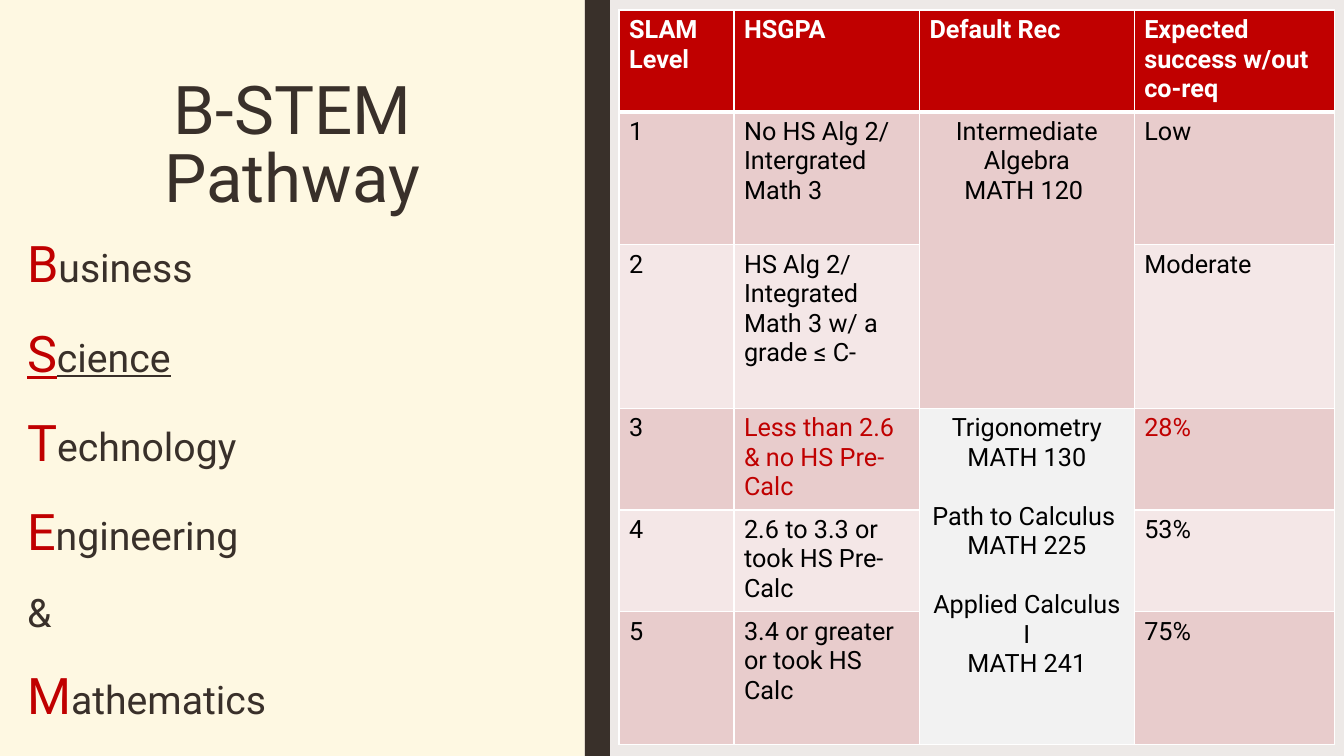
from lxml import etree
from pptx import Presentation
from pptx import util as u
from pptx.dml import color
from pptx.enum import shapes, text
from pptx.oxml import ns

PX = 9144
FONT = "Roboto"
RED, BROWN, CREAM, WHITE, BLACK = "C00000", "39302A", "FEF8E2", "FFFFFF", "000000"
BANDS = ("E8CCCC", "F4E7E7")
SUBJECTS = ("Business", "Science", "Technology", "Engineering", "&", "Mathematics")
COLUMNS = (114, 184, 213, 199)
ROWS = (101, 132, 162, 101, 101, 132)
COURSE_COLUMN = 2
COURSE_SPANS = ((1, 2, BANDS[0]), (3, 5, "F2F2F2"))
LEVELS = (
    ("SLAM Level", "HSGPA", "Default Rec", "Expected success w/out co-req"),
    ("1", "No HS Alg 2/ Intergrated Math 3", "Intermediate Algebra\nMATH 120 ", "Low"),
    ("2", "HS Alg 2/ Integrated Math 3 w/ a grade ≤ C-", "", "Moderate"),
    ("3", "Less than 2.6 & no HS Pre-Calc",
     "Trigonometry\nMATH 130\nPath to Calculus \nMATH 225\nApplied Calculus I\nMATH 241", "28%"),
    ("4", "2.6 to 3.3 or took HS Pre-Calc", "", "53%"),
    ("5", "3.4 or greater or took HS Calc", "", "75%"),
)
RED_CELLS = ((3, 1), (3, 3))


def px(*lengths):
    """Turn whole px into EMU."""
    return [u.Emu(length * PX) for length in lengths]


def paint(fill, value):
    """Give a fill one solid colour."""
    fill.solid()
    fill.fore_color.rgb = color.RGBColor.from_string(value)


def style(font, size, value, bold=False):
    """Set the face, size, weight and colour of a font."""
    font.name, font.size, font.bold = FONT, u.Pt(size), bold
    font.color.rgb = color.RGBColor.from_string(value)


def add_panel(page, box, value):
    """Fill the box with a plain rectangle."""
    panel = page.shapes.add_shape(shapes.MSO_SHAPE.RECTANGLE, *px(*box))
    panel.shadow.inherit = False
    panel.line.fill.background()
    paint(panel.fill, value)


def add_frame(page, box):
    """Add a wrapping text box and return its text frame."""
    frame = page.shapes.add_textbox(*px(*box)).text_frame
    frame.word_wrap = True
    return frame


def add_title(page, box):
    """Write the centred heading."""
    para = add_frame(page, box).paragraphs[0]
    para.text = "B-STEM Pathway"
    para.alignment = text.PP_ALIGN.CENTER
    para.line_spacing = 0.84
    style(para.font, 48, BROWN)


def add_subjects(page, box):
    """List the subjects, each with a large red initial."""
    frame = add_frame(page, box)
    for index, subject in enumerate(SUBJECTS):
        para = frame.add_paragraph() if index else frame.paragraphs[0]
        para.line_spacing, para.space_after = 1.13, u.Pt(15)
        parts = ((subject[0], 36, RED), (subject[1:], 28, BROWN))
        if subject == "&":
            parts = ((subject, 28, BROWN),)
        for words, size, value in parts:
            span = para.add_run()
            span.text = words
            style(span.font, size, value)
            if subject == "Science":
                span.font.underline = True


def add_borders(cell, row):
    """Draw white cell borders, with a thick rule under the header."""
    sides = {"L": 1, "R": 1, "T": 3 if row == 1 else 1, "B": 3 if row == 0 else 1}
    for side, width in sides.items():
        line = etree.SubElement(cell._tc.get_or_add_tcPr(), ns.qn(f"a:ln{side}"), w=str(u.Pt(width)))
        fill = etree.SubElement(line, ns.qn("a:solidFill"))
        etree.SubElement(fill, ns.qn("a:srgbClr"), val=WHITE)


def fill_cell(cell, row, column, words):
    """Write and colour one table cell."""
    header = row == 0
    course = column == COURSE_COLUMN and not header
    add_borders(cell, row)
    band = RED if header else BANDS[(row - 1) % 2]
    if course:
        band = next(value for first, last, value in COURSE_SPANS if first <= row <= last)
    paint(cell.fill, band)
    cell.text = words
    ink = WHITE if header else RED if (row, column) in RED_CELLS else BLACK
    for index, para in enumerate(cell.text_frame.paragraphs):
        style(para.font, 18, ink, header)
        if course:
            para.alignment = text.PP_ALIGN.CENTER
            if index and index % 2 == 0:
                para.space_before = u.Pt(21)


def add_levels(page, box):
    """Build the table of placement levels."""
    table = page.shapes.add_table(len(ROWS), len(COLUMNS), *px(*box)).table
    for column, width in zip(table.columns, px(*COLUMNS)):
        column.width = width
    for row, height in zip(table.rows, px(*ROWS)):
        row.height = height
    for row, entries in enumerate(LEVELS):
        for column, words in enumerate(entries):
            fill_cell(table.cell(row, column), row, column, words)
    for first, last, _ in COURSE_SPANS:
        table.cell(first, COURSE_COLUMN).merge(table.cell(last, COURSE_COLUMN))


def add_pathway(page, box):
    """Place the left side: panel, divider, heading and subjects."""
    left, top, width, height = box
    add_panel(page, (left, top, width - 25, height), CREAM)
    add_panel(page, (left + width - 25, top, 25, height), BROWN)
    add_title(page, (left + 79, top + 75, 422, 236))
    add_subjects(page, (left + 17, top + 218, 483, 493))


def main():
    """Build the deck and save it."""
    deck = Presentation()
    deck.slide_width, deck.slide_height = px(1333, 750)
    page = deck.slides.add_slide(deck.slide_layouts[6])
    paint(page.background.fill, "EDE9E7")
    add_pathway(page, (0, 0, 605, 750))
    add_levels(page, (614, 10, sum(COLUMNS), sum(ROWS)))
    deck.save("out.pptx")


if __name__ == "__main__":
    main()
